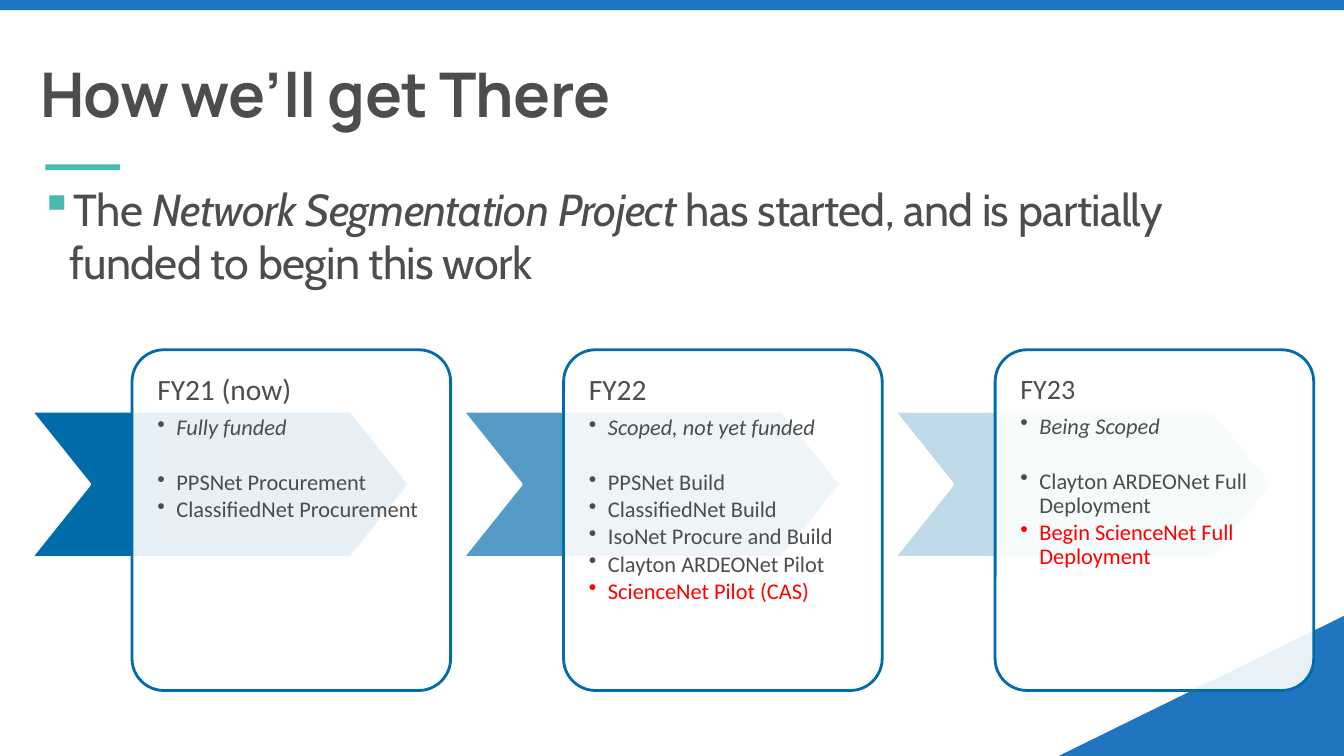
import pptx
import pptx.util
import pptx.dml.color
import pptx.enum.shapes
import pptx.enum.text
from lxml import etree

Inches, Pt = pptx.util.Inches, pptx.util.Pt
SHAPE = pptx.enum.shapes.MSO_SHAPE
ANCHOR = pptx.enum.text.MSO_ANCHOR
NS = "http://schemas.openxmlformats.org/drawingml/2006/main"

# Content
TITLE = "How we’ll get There"
INTRO = [("The ", False), ("Network Segmentation Project", True),
         (" has started, and is partially funded to begin this work", False)]
# heading, heading size, chevron opacity, funding status, (step, is new)
YEARS = [
    ("FY21 (now)", 21, 100, "Fully funded",
     [("PPSNet Procurement", False), ("ClassifiedNet Procurement", False)]),
    ("FY22", 21, 67, "Scoped, not yet funded",
     [("PPSNet Build", False), ("ClassifiedNet Build", False),
      ("IsoNet Procure and Build", False), ("Clayton ARDEONet Pilot", False),
      ("ScienceNet Pilot (CAS)", True)]),
    ("FY23", 20, 25, "Being Scoped",
     [("Clayton ARDEONet Full Deployment", False),
      ("Begin ScienceNet Full Deployment", True)]),
]

# Format values
BLUE, NAVY, TEAL, GREY, RED, WHITE = (
    "1F75C0", "006CA9", "47B8B2", "4C4D4C", "FF0000", "FFFFFF")
TITLE_FONT = {"name": "Manrope", "size": Pt(44), "bold": True}
INTRO_FONT = {"name": "Cabin", "size": Pt(32)}
STEP_FONT = {"name": "Calibri", "size": Pt(16)}
LEFT, PITCH = 0.31, 4.28


def rgb(value):
    return pptx.dml.color.RGBColor.from_string(value)


def add_shape(kind, box, fill, line=None, opacity=100, adj=None):
    sp = s.shapes.add_shape(kind, *map(Inches, box))
    sp.shadow.inherit = False
    sp.fill.solid()
    sp.fill.fore_color.rgb = rgb(fill)
    if opacity < 100:
        color = sp.fill._xPr.find(f".//{{{NS}}}srgbClr")
        etree.SubElement(color, f"{{{NS}}}alpha", val=str(opacity * 1000))
    if line:
        sp.line.color.rgb = rgb(line)
        sp.line.width = Pt(2)
    else:
        sp.line.fill.background()
    if adj is not None:
        sp.adjustments[0] = adj
    return sp


def add_text(box, anchor=ANCHOR.TOP, inset=None):
    tf = s.shapes.add_textbox(*map(Inches, box)).text_frame
    tf.word_wrap = True
    tf.vertical_anchor = anchor
    if inset is not None:
        for side in ("left", "top", "right", "bottom"):
            setattr(tf, f"margin_{side}", Inches(inset))
    return tf


def add_bullet(p, char, indent, color=None):
    pPr = p._p.get_or_add_pPr()
    pPr.set("marL", str(Inches(indent)))
    pPr.set("indent", str(-Inches(indent)))
    if color:
        bu = etree.SubElement(pPr, f"{{{NS}}}buClr")
        etree.SubElement(bu, f"{{{NS}}}srgbClr", val=color)
    etree.SubElement(pPr, f"{{{NS}}}buChar", char=char)


def add_run(p, text, font, color=GREY, italic=False, spacing=None):
    r = p.add_run()
    r.text = text
    for key, value in {**font, "italic": italic}.items():
        setattr(r.font, key, value)
    r.font.color.rgb = rgb(color)
    if spacing is not None:
        r._r.get_or_add_rPr().set("spc", str(spacing))


prs = pptx.Presentation()
prs.slide_width, prs.slide_height = Inches(13.33), Inches(7.5)
s = prs.slides.add_slide(prs.slide_layouts[6])

# Corner triangle and top band
corner = add_shape(SHAPE.RIGHT_TRIANGLE, (10.5, 6.11, 2.83, 1.39), BLUE)
corner._element.spPr.find(f"{{{NS}}}xfrm").set("flipH", "1")
add_shape(SHAPE.RECTANGLE, (0, 0, 13.33, 0.1), BLUE)

# Title and accent bar
p = add_text((0.3, 0.1, 12.36, 1.25), ANCHOR.BOTTOM).paragraphs[0]
p.line_spacing = 0.9
add_run(p, TITLE, TITLE_FONT, spacing=-50)
add_shape(SHAPE.RECTANGLE, (0.45, 1.63, 0.74, 0.06), TEAL)

# Introduction
p = add_text((0.3, 1.75, 12.36, 1.4)).paragraphs[0]
add_bullet(p, "▪", 0.29, TEAL)
for text, italic in INTRO:
    add_run(p, text, INTRO_FONT, italic=italic, spacing=-50)

# One chevron and card per year
for i, (heading, size, opacity, status, steps) in enumerate(YEARS):
    x = LEFT + i * PITCH
    add_shape(SHAPE.CHEVRON, (x, 4.08, 3.75, 1.45), NAVY, WHITE, opacity, 0.4)
    add_shape(SHAPE.ROUNDED_RECTANGLE, (x + 1, 3.47, 3.16, 3.38),
              WHITE, NAVY, 90, 0.1)
    tf = add_text((x + 1.09, 3.56, 2.98, 3.19), inset=0.16)
    p = tf.paragraphs[0]
    p.line_spacing, p.space_after = 0.9, Pt(7)
    add_run(p, heading, {**STEP_FONT, "size": Pt(size)})

    # The status line is set apart from the steps below it
    lines = [(status, GREY, True, 22)]
    lines += [(step, RED if new else GREY, False, 2.1) for step, new in steps]
    for text, color, italic, after in lines:
        p = tf.add_paragraph()
        p.line_spacing, p.space_after = 0.9, Pt(after)
        add_bullet(p, "•", 0.19)
        add_run(p, text, STEP_FONT, color, italic)

prs.save("out.pptx")
